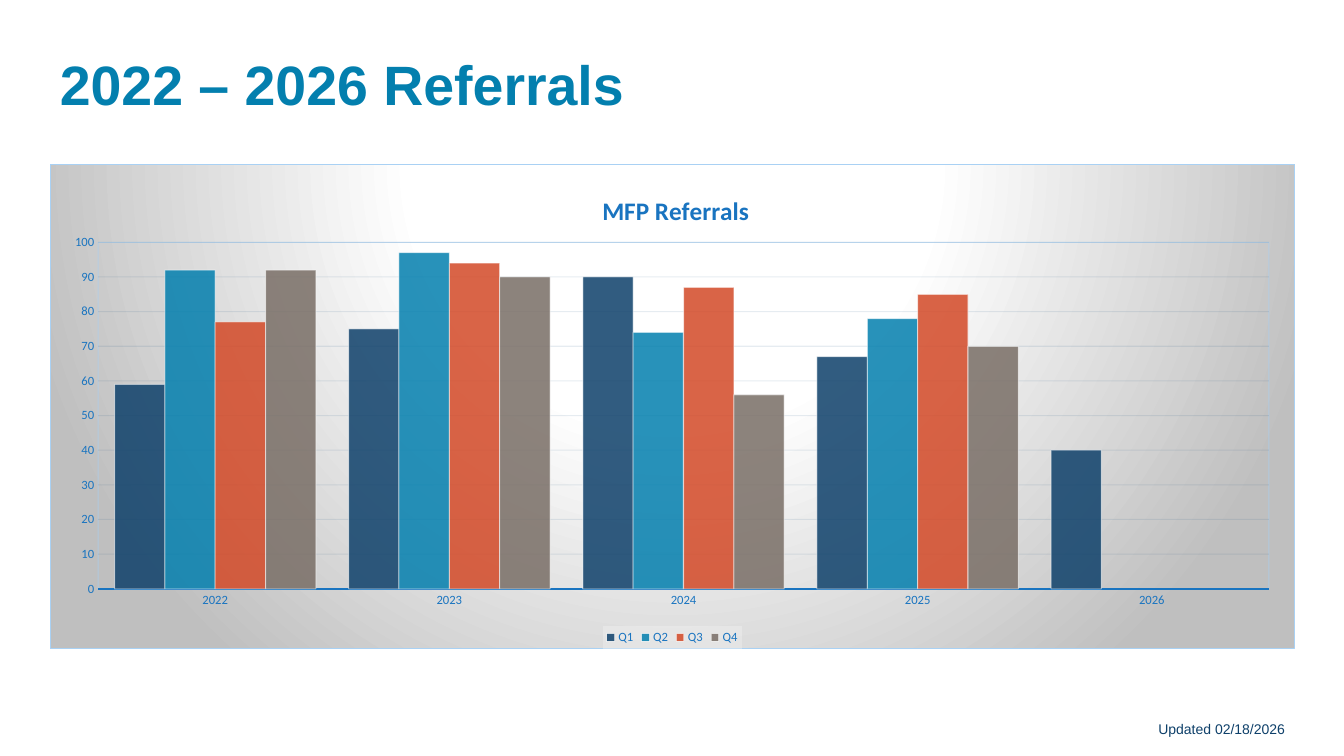
import pptx
import pptx.chart.data
import pptx.dml.color
import pptx.enum.chart
import pptx.enum.text
import pptx.oxml
import pptx.oxml.ns
import pptx.util

NS = pptx.oxml.ns.nsdecls("a", "c")
qn = pptx.oxml.ns.qn
NAVY, TEAL, RUST, TAUPE = "0E406A", "037FAE", "D34927", "796E66"
BLUE, PALE, WHITE = "1974C0", "A9D1F4", "FFFFFF"
YEARS = ["2022", "2023", "2024", "2025", "2026"]
REFERRALS = [
    ("Q1", NAVY, [59, 75, 90, 67, 40]),
    ("Q2", TEAL, [92, 97, 74, 78, None]),
    ("Q3", RUST, [77, 94, 87, 85, None]),
    ("Q4", TAUPE, [92, 90, 56, 70, None]),
]


def rgb(value):
    return pptx.dml.color.RGBColor.from_string(value)


def solid(value, opacity=100):
    return (f'<a:solidFill><a:srgbClr val="{value}">'
            f'<a:alpha val="{opacity * 1000}"/></a:srgbClr></a:solidFill>')


def shape_props(fill, line="<a:noFill/>"):
    return pptx.oxml.parse_xml(
        f'<c:spPr {NS}>{fill}<a:ln w="9525">{line}</a:ln></c:spPr>')


def manual_layout(x, y, w=None, h=None):
    target = '<c:layoutTarget val="inner"/>' if w else ""
    size = f'<c:w val="{w}"/><c:h val="{h}"/>' if w else ""
    return pptx.oxml.parse_xml(
        f'<c:layout {NS}><c:manualLayout>{target}<c:xMode val="edge"/>'
        f'<c:yMode val="edge"/><c:x val="{x}"/><c:y val="{y}"/>{size}'
        '</c:manualLayout></c:layout>')


def drop_layout(element):
    for old in element.findall(qn("c:layout")):
        element.remove(old)


def set_opacity(element, opacity):
    for color in element.iter(qn("a:srgbClr")):
        color.append(pptx.oxml.parse_xml(f'<a:alpha {NS} val="{opacity * 1000}"/>'))


class Deck:
    text_font = "Arial"
    chart_font = "Calibri"

    def __init__(self):
        self.prs = pptx.Presentation()
        self.prs.slide_width = pptx.util.Inches(13.33)
        self.prs.slide_height = pptx.util.Inches(7.5)
        self.s = self.prs.slides.add_slide(self.prs.slide_layouts[5])

    def box(self, x, y, w, h):
        width, height = self.prs.slide_width, self.prs.slide_height
        return [round(share * side / 100) for share, side in
                zip((x, y, w, h), (width, height, width, height))]

    def style(self, font, name, size, color, bold=False):
        font.name, font.size, font.bold = name, pptx.util.Pt(size), bold
        font.color.rgb = rgb(color)

    def title(self, text, *place):
        sp = self.s.shapes.title
        sp.left, sp.top, sp.width, sp.height = self.box(*place)
        tf = sp.text_frame
        tf.auto_size = pptx.enum.text.MSO_AUTO_SIZE.NONE
        tf.vertical_anchor = pptx.enum.text.MSO_ANCHOR.MIDDLE
        tf.text = text
        p = tf.paragraphs[0]
        p.alignment = pptx.enum.text.PP_ALIGN.LEFT
        p.line_spacing = 0.9
        self.style(p.font, self.text_font, 39.6, TEAL, True)

    def note(self, text, *place):
        tf = self.s.shapes.add_textbox(*self.box(*place)).text_frame
        tf.word_wrap = False
        tf.auto_size = pptx.enum.text.MSO_AUTO_SIZE.SHAPE_TO_FIT_TEXT
        tf.text = text
        self.style(tf.paragraphs[0].font, self.text_font, 10, NAVY)

    def columns(self, heading, categories, series, *place):
        data = pptx.chart.data.CategoryChartData()
        data.categories = categories
        for name, color, values in series:
            data.add_series(name, values)
        chart = self.s.shapes.add_chart(
            pptx.enum.chart.XL_CHART_TYPE.COLUMN_CLUSTERED,
            *self.box(*place), data).chart
        self.style(chart.font, self.chart_font, 10, NAVY)
        self.chart_title(chart, heading)
        self.bars(chart.plots[0], [color for name, color, values in series])
        self.axes(chart)
        self.legend(chart)
        self.backdrop(chart)

    def chart_title(self, chart, heading):
        title = chart.chart_title
        title.include_in_layout = False
        title.text_frame.text = heading
        self.style(title.text_frame.paragraphs[0].font, self.chart_font, 18, BLUE, True)
        element = title._element
        drop_layout(element)
        element.find(qn("c:tx")).addnext(manual_layout(0.44, 0.05))

    def bars(self, plot, colors):
        plot.gap_width, plot.overlap = 65, 0
        plot.vary_by_categories = False
        for bar, color in zip(plot.series, colors):
            bar.invert_if_negative = False
            bar.format.fill.solid()
            bar.format.fill.fore_color.rgb = rgb(color)
            set_opacity(bar._element, 85)
            line = bar.format.line
            line.width = pptx.util.Pt(0.75)
            line.color.rgb = rgb(WHITE)
            set_opacity(bar._element.find(".//" + qn("a:ln")), 50)

    def axes(self, chart):
        for axis in (chart.category_axis, chart.value_axis):
            axis.major_tick_mark = pptx.enum.chart.XL_TICK_MARK.NONE
            axis.minor_tick_mark = pptx.enum.chart.XL_TICK_MARK.NONE
            self.style(axis.tick_labels.font, self.chart_font, 9, BLUE)
        baseline = chart.category_axis.format.line
        baseline.width = pptx.util.Pt(1.5)
        baseline.color.rgb = rgb(BLUE)
        scale = chart.value_axis
        scale.minimum_scale, scale.maximum_scale, scale.major_unit = 0, 100, 10
        scale.format.line.fill.background()
        grid = scale.major_gridlines
        grid.format.line.width = pptx.util.Pt(0.75)
        grid.format.line.color.rgb = rgb("104A7B")
        set_opacity(scale._element.find(qn("c:majorGridlines")), 10)

    def legend(self, chart):
        chart.has_legend = True
        legend = chart.legend
        legend.position = pptx.enum.chart.XL_LEGEND_POSITION.BOTTOM
        legend.include_in_layout = False
        self.style(legend.font, self.chart_font, 9, BLUE)
        legend._element.find(qn("c:txPr")).addprevious(
            shape_props(solid("F2F2F2", 40)))

    def backdrop(self, chart):
        stops = "".join(
            f'<a:gs pos="{pos * 1000}"><a:srgbClr val="{color}"/></a:gs>'
            for pos, color in ((0, WHITE), (39, WHITE), (100, "BFBFBF")))
        gradient = (f'<a:gradFill><a:gsLst>{stops}</a:gsLst><a:path path="circle">'
                    '<a:fillToRect l="50000" t="-80000" r="50000" b="180000"/>'
                    '</a:path></a:gradFill>')
        root = chart._chartSpace
        root.find(qn("c:txPr")).addprevious(shape_props(gradient, solid(PALE)))
        area = root.find(".//" + qn("c:plotArea"))
        drop_layout(area)
        area.insert(0, manual_layout(0.0385, 0.16, 0.941, 0.716))
        area.append(shape_props("<a:noFill/>", solid(PALE, 60)))


def main():
    deck = Deck()
    deck.title("2022 – 2026 Referrals", 3.7, 7.6, 92.65, 8)
    deck.note("Updated 02/18/2026", 85.45, 94.67, 10.95, 3.6)
    deck.columns("MFP Referrals", YEARS, REFERRALS, 3.7, 21.75, 92.65, 64.15)
    deck.prs.save("out.pptx")


if __name__ == "__main__":
    main()
